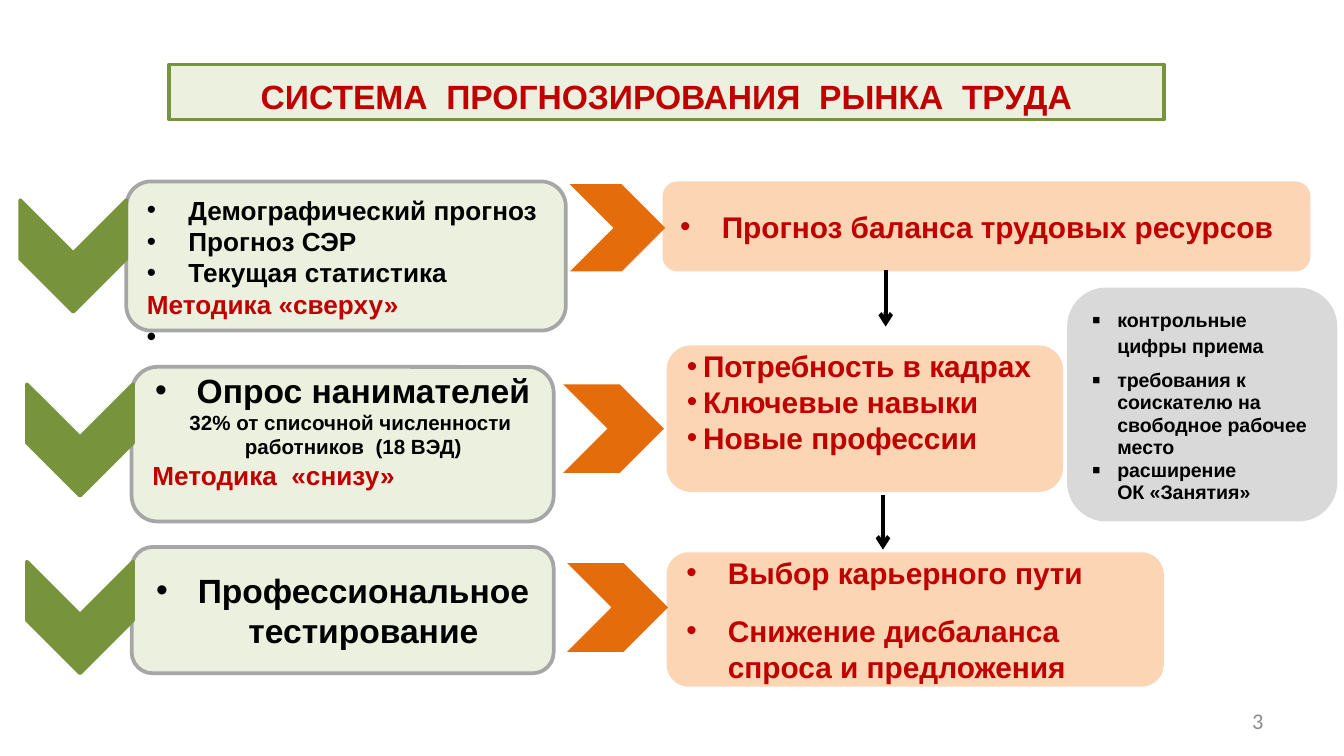
from dataclasses import dataclass

from lxml.etree import SubElement
from pptx import Presentation
from pptx.dml.color import RGBColor
from pptx.enum.shapes import MSO_CONNECTOR, MSO_SHAPE
from pptx.enum.text import MSO_ANCHOR as ANCHOR, PP_ALIGN as ALIGN
from pptx.oxml.ns import qn
from pptx.util import Inches, Pt


@dataclass(frozen=True)
class Theme:
    font: str = "Arial"
    number_font: str = "Calibri"
    black: str = "000000"
    red: str = "C00000"
    green: str = "77933C"
    pale_green: str = "EBF1DE"
    orange: str = "E46C0A"
    peach: str = "FCD5B5"
    border: str = "A6A6A6"
    gray: str = "D9D9D9"
    number_gray: str = "8C8C8C"
    heading: float = 18
    result: float = 16
    body: float = 14
    page_number: float = 12
    detail: float = 11
    note: float = 10.5


theme = Theme()
presentation = Presentation()
presentation.slide_width = Inches(10)
presentation.slide_height = Inches(10) * 9 // 16
slide = presentation.slides.add_slide(presentation.slide_layouts[6])


def add_block(kind, frame, fill, line=None, rotation=0):
    shape = slide.shapes.add_shape(kind, *map(Inches, frame))
    shape.shadow.inherit = False
    shape.rotation = rotation
    shape.fill.solid()
    shape.fill.fore_color.rgb = RGBColor.from_string(fill)
    if line:
        shape.line.color.rgb = RGBColor.from_string(line)
        shape.line.width = Pt(2)
    else:
        shape.line.fill.background()
    return shape


def write(shape, lines, anchor=ANCHOR.MIDDLE, **margins):
    """Fill a shape with (text, size, colour, paragraph options) lines."""
    frame = shape.text_frame
    frame.word_wrap = True
    frame.vertical_anchor = anchor
    for side, inset in margins.items():
        setattr(frame, f"margin_{side}", Inches(inset))
    for index, (text, size, color, options) in enumerate(lines):
        paragraph = frame.paragraphs[0] if index == 0 else frame.add_paragraph()
        paragraph.text = text
        layout = {"alignment": ALIGN.LEFT} | options.get("layout", {})
        for name, value in layout.items():
            setattr(paragraph, name, value)
        for run in paragraph.runs:
            values = {"name": theme.font, "size": Pt(size), "bold": True} | options.get("font", {})
            for name, value in values.items():
                setattr(run.font, name, value)
            run.font.color.rgb = RGBColor.from_string(color)
        for line_break in paragraph._p.findall(qn("a:br")):
            SubElement(line_break, qn("a:rPr"), sz=str(int(size * 100)))
        properties = paragraph._p.get_or_add_pPr()
        indent = options.get("indent", 0)
        properties.set("marL", str(Inches(indent)))
        if "bullet" in options:
            properties.set("indent", str(-Inches(indent)))
            if "bullet_scale" in options:
                SubElement(properties, qn("a:buSzPct"), val=str(options["bullet_scale"] * 1000))
            SubElement(properties, qn("a:buFont"), typeface=theme.font)
            SubElement(properties, qn("a:buChar"), char=options["bullet"])


centered = {"alignment": ALIGN.CENTER}
spaced = {"space_before": Pt(6), "space_after": Pt(6)}
bullet = {"bullet": "•", "indent": 0.31}
tight_bullet = {"bullet": "•", "indent": 0.12}
centered_bullet = bullet | {"layout": centered}
spaced_bullet = bullet | {"layout": spaced}
square = {"bullet": "▪", "indent": 0.19, "bullet_scale": 130}
first_note = square | {"layout": spaced | {"line_spacing": Pt(14)}}
next_note = square | {"layout": {"line_spacing": Pt(12)}}

# Slide number and title
number = slide.shapes.add_textbox(Inches(7.17), Inches(5.21), Inches(2.33), Inches(0.3))
write(number, [("3", theme.page_number, theme.number_gray,
                {"layout": {"alignment": ALIGN.RIGHT},
                 "font": {"name": theme.number_font, "bold": False}})])
title = add_block(MSO_SHAPE.RECTANGLE, (1.26, 0.48, 7.4, 0.41), theme.pale_green, theme.green)
write(title, [("СИСТЕМА  ПРОГНОЗИРОВАНИЯ  РЫНКА  ТРУДА", theme.heading, theme.red,
               {"layout": centered | spaced | {"line_spacing": Pt(24)}})], ANCHOR.TOP)

# Sources on the left, results on the right: frame, fill, border, lines, text placement
boxes = [
    ((0.94, 1.35, 3.27, 1.11), theme.pale_green, theme.border, [
        ("Демографический прогноз", theme.body, theme.black, bullet),
        ("Прогноз СЭР", theme.body, theme.black, bullet),
        ("Текущая статистика", theme.body, theme.black, bullet),
        ("Методика «сверху»", theme.body, theme.red, {}),
        ("•", theme.body, theme.black, {}),
    ], {"anchor": ANCHOR.TOP, "top": 0.04}),
    ((0.98, 2.73, 3.14, 1.15), theme.pale_green, theme.border, [
        ("Опрос нанимателей", theme.heading, theme.black, centered_bullet),
        ("32% от списочной численности \vработников  (18 ВЭД)", theme.detail, theme.black,
         {"indent": 0.16, "layout": centered}),
        ("Методика  «снизу»", theme.body, theme.red, {}),
    ], {"bottom": 0.26}),
    ((0.98, 4.07, 3.14, 0.94), theme.pale_green, theme.border, [
        ("Профессиональное тестирование", theme.heading, theme.black, centered_bullet),
    ], {}),
    ((4.93, 1.35, 4.82, 0.67), theme.peach, None, [
        ("Прогноз баланса трудовых ресурсов", theme.result, theme.red, bullet),
    ], {}),
    ((4.96, 2.57, 2.95, 1.09), theme.peach, None, [
        (text, theme.result, theme.red, tight_bullet)
        for text in ("Потребность в кадрах", "Ключевые навыки", "Новые профессии")
    ], {"bottom": 0.3}),
    ((4.96, 4.11, 3.7, 1), theme.peach, None, [
        (text, theme.result, theme.red, spaced_bullet)
        for text in ("Выбор карьерного пути", "Снижение дисбаланса спроса и предложения")
    ], {}),
    ((7.94, 2.14, 2.01, 1.74), theme.gray, None, [
        ("контрольные цифры приема", theme.note, theme.black, first_note),
        ("требования к соискателю на свободное рабочее место", theme.note, theme.black, next_note),
        ("расширение \vОК «Занятия»", theme.note, theme.black, next_note),
    ], {}),
]
for frame, fill, border, lines, placement in boxes:
    write(add_block(MSO_SHAPE.ROUNDED_RECTANGLE, frame, fill, border), lines, **placement)

# Chevrons: green ones point down, orange ones point to the results
for left, top in [(0.13, 1.51), (0.18, 2.88), (0.18, 4.2)]:
    add_block(MSO_SHAPE.CHEVRON, (left, top, 0.83, 0.79), theme.green, theme.green, rotation=90)
for left, top, width, height in [
    (4.24, 1.37, 0.71, 0.65), (4.19, 2.86, 0.75, 0.66), (4.22, 4.19, 0.75, 0.66),
]:
    add_block(MSO_SHAPE.CHEVRON, (left, top, width, height), theme.orange)

# Arrows between the results
for x, top, bottom in [(6.59, 2.01, 2.43), (6.57, 3.68, 4.09)]:
    arrow = slide.shapes.add_connector(
        MSO_CONNECTOR.STRAIGHT, Inches(x), Inches(top), Inches(x), Inches(bottom))
    arrow.line.color.rgb = RGBColor.from_string(theme.black)
    arrow.line.width = Pt(2.25)
    SubElement(arrow.line._get_or_add_ln(), qn("a:tailEnd"), type="arrow")
    SubElement(arrow._element.spPr, qn("a:effectLst"))

presentation.save("out.pptx")
